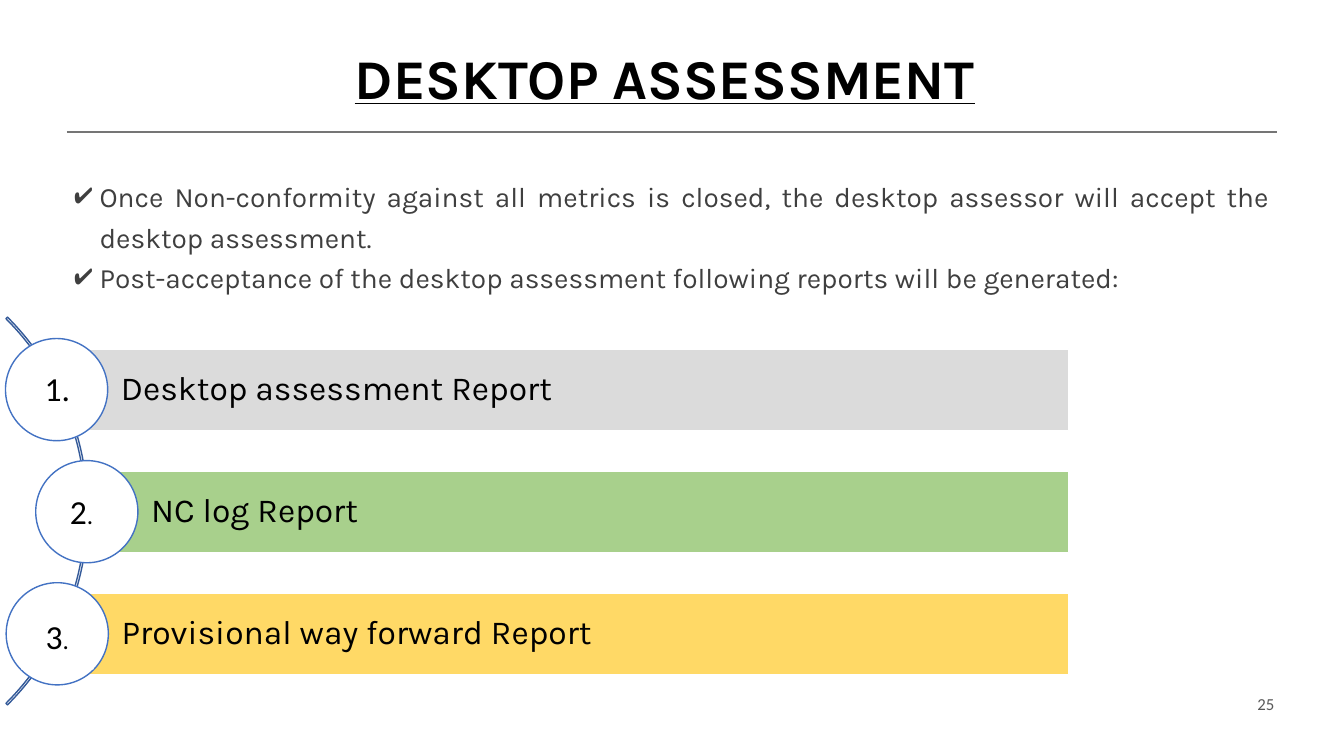
from lxml import etree
from pptx import Presentation
from pptx.dml.color import RGBColor
from pptx.enum.shapes import MSO_CONNECTOR, MSO_SHAPE
from pptx.enum.text import MSO_ANCHOR, PP_ALIGN
from pptx.oxml.ns import qn
from pptx.util import Pt

MIDDLE, BOTTOM, TOP = MSO_ANCHOR.MIDDLE, MSO_ANCHOR.BOTTOM, MSO_ANCHOR.TOP
LEFT, CENTER, RIGHT, JUSTIFY = PP_ALIGN.LEFT, PP_ALIGN.CENTER, PP_ALIGN.RIGHT, PP_ALIGN.JUSTIFY
RECTANGLE, OVAL, BLOCK_ARC = MSO_SHAPE.RECTANGLE, MSO_SHAPE.OVAL, MSO_SHAPE.BLOCK_ARC
COLORS = {
    "white": "FFFFFF", "black": "000000", "body": "3F3F3F", "number": "595959",
    "rule": "757575", "arc": "345A99", "circle": "4372C3",
    "gray": "DBDBDB", "green": "A8D08C", "yellow": "FFD966",
}


def add_figure(kind, left, top, width, height, fill=None, line=None):
    shape = page.shapes.add_shape(kind, Pt(left), Pt(top), Pt(width), Pt(height))
    shape.shadow.inherit = False
    if fill:
        shape.fill.solid()
        shape.fill.fore_color.rgb = RGBColor.from_string(COLORS[fill])
    else:
        shape.fill.background()
    if line:
        shape.line.color.rgb = RGBColor.from_string(COLORS[line])
        shape.line.width = Pt(1)
    else:
        shape.line.fill.background()
    return shape


def write(shape, lines, size, font, color, align, anchor, spacing=1.0, bullet=None):
    frame = shape.text_frame
    frame.word_wrap = True
    frame.vertical_anchor = anchor
    for index, line in enumerate(lines):
        para = frame.paragraphs[0] if index == 0 else frame.add_paragraph()
        para.text = line
        para.alignment = align
        para.line_spacing = spacing
        if bullet:
            properties = para._p.get_or_add_pPr()
            properties.set("marL", str(Pt(18)))
            properties.set("indent", str(Pt(-18)))
            etree.SubElement(properties, qn("a:buChar")).set("char", bullet)
        para.font.size = Pt(size)
        para.font.name = font
        para.font.color.rgb = RGBColor.from_string(COLORS[color])
    return frame


deck = Presentation()
deck.slide_width, deck.slide_height = Pt(960), Pt(540)
page = deck.slides.add_slide(deck.slide_layouts[6])

rule = page.shapes.add_connector(MSO_CONNECTOR.STRAIGHT, Pt(47.8), Pt(94.3), Pt(912.2), Pt(94.3))
rule.line.color.rgb = RGBColor.from_string(COLORS["rule"])
rule.line.width = Pt(0.75)
etree.SubElement(rule._element.spPr, qn("a:effectLst"))

page_number = page.shapes.add_textbox(Pt(659.5), Pt(488.2), Pt(257.8), Pt(28.8))
write(page_number, ["25"], 12, "Calibri", "number", RIGHT, MIDDLE)

title = page.shapes.add_textbox(Pt(41), Pt(33.1), Pt(867.6), Pt(50.4))
title_frame = write(title, ["DESKTOP ASSESSMENT"], 40, "Karla", "black", CENTER, BOTTOM, 0.9)
title_frame.paragraphs[0].font.bold = True
title_frame.paragraphs[0].font.underline = True

body = page.shapes.add_textbox(Pt(46.1), Pt(120.2), Pt(868.3), Pt(155.5))
write(body, [
    "Once Non-conformity against all metrics is closed, the desktop assessor will accept the desktop assessment.",
    "Post-acceptance of the desktop assessment following reports will be generated:",
], 20, "Karla", "body", JUSTIFY, TOP, 1.2, "✔")

arc = add_figure(BLOCK_ARC, -329, 169.2, 391.7, 391.7, line="arc")
for index, value in enumerate((189, 27, 0.004)):
    arc.adjustments[index] = value

BAR_RIGHT, BAR_HEIGHT, CIRCLE, PITCH = 763.2, 58.2, 73, 87.2
reports = [
    ("Desktop assessment Report", "gray", 40.3, (10.1, 263.5, 61.9, 27.4), 24),
    ("NC log Report", "green", 61.9, (32.4, 346.3, 51.8, 37.4), 18),
    ("Provisional way forward Report", "yellow", 40.8, (15.1, 430.6, 51.8, 47.5), 18),
]
for index, (name, fill, left, label_box, dot_size) in enumerate(reports):
    center = 278.3 + index * PITCH
    bar = add_figure(RECTANGLE, left, center - BAR_HEIGHT / 2, BAR_RIGHT - left, BAR_HEIGHT, fill, "white")
    bar_frame = write(bar, [name], 24, "Karla", "black", LEFT, MIDDLE, 0.9)
    bar_frame.margin_left = Pt(46.1)
    bar_frame.margin_right = Pt(5)
    add_figure(OVAL, left - 36.4, center - CIRCLE / 2, CIRCLE, CIRCLE, "white", "circle")

    label = add_figure(RECTANGLE, *label_box, fill="white")
    label_frame = write(label, [str(index + 1)], 24, "Calibri", "black", CENTER, MIDDLE)
    dot = label_frame.paragraphs[0].add_run()
    dot.text = "."
    dot.font.size = Pt(dot_size)

deck.save("out.pptx")
